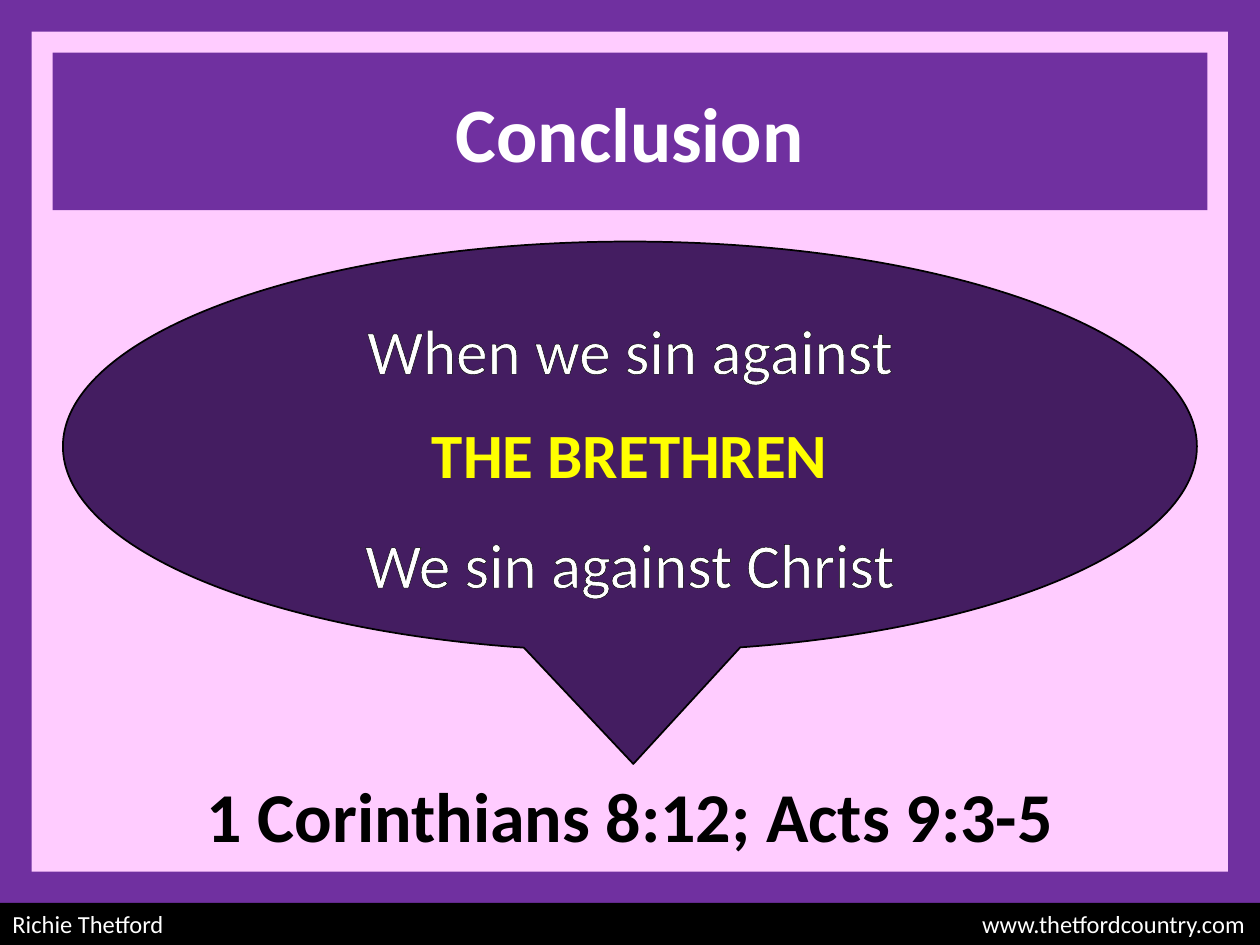
import pptx
import pptx.util
import pptx.dml.color
import pptx.enum.shapes
import pptx.enum.text
import pptx.oxml
from dataclasses import dataclass
from pptx.oxml.ns import nsdecls

Cm, Pt = pptx.util.Cm, pptx.util.Pt
RGB = pptx.dml.color.RGBColor.from_string
SHAPE = pptx.enum.shapes.MSO_SHAPE
ALIGN = pptx.enum.text.PP_ALIGN
ANCHOR = pptx.enum.text.MSO_ANCHOR


@dataclass(frozen=True)
class Theme:
    font: str = "Calibri"
    page: str = "FFCCFF"
    frame: str = "7030A0"
    callout: str = "441D61"
    dark: str = "000000"
    light: str = "FFFFFF"
    accent: str = "FFFF00"
    title: int = 44
    reference: int = 40
    body: int = 36
    footer: int = 14


theme = Theme()


def add_block(s, kind, left, top, width, height, color):
    """Add a filled preset shape without line or shadow; lengths in cm."""
    sp = s.shapes.add_shape(kind, Cm(left), Cm(top), Cm(width), Cm(height))
    sp.shadow.inherit = False
    sp.fill.solid()
    sp.fill.fore_color.rgb = RGB(color)
    sp.line.fill.background()
    return sp


def write(sp, text, size, color, bold=False, align=ALIGN.CENTER):
    """Put one formatted paragraph in a shape and return it."""
    p = sp.text_frame.paragraphs[0]
    p.text = text
    p.alignment = align
    for r in p.runs:
        r.font.size = Pt(size)
        r.font.bold = bold
        r.font.color.rgb = RGB(color)
        r.font.name = theme.font
    return p


prs = pptx.Presentation()
prs.slide_width, prs.slide_height = Cm(25.4), Cm(19.05)
s = prs.slides.add_slide(prs.slide_layouts[6])
s.background.fill.solid()
s.background.fill.fore_color.rgb = RGB(theme.page)

# Frame: left, right, top, bottom
band = 0.64
for box in [(0, 0, band, 19.05), (25.4 - band, 0, band, 19.05),
            (0, 0, 25.4, band), (0, 17.57, 25.4, band)]:
    add_block(s, SHAPE.RECTANGLE, *box, theme.frame)

# Speech bubble
bubble = add_block(s, SHAPE.OVAL_CALLOUT, 1.27, 4.87, 22.86, 8.26, theme.callout)
bubble.adjustments[0] = 0.003
bubble.adjustments[1] = 0.775
bubble.line.color.rgb = RGB(theme.dark)
bubble.line.width = Pt(1)

for text, top, color, bold in [
    ("When we sin against", 6.15, theme.light, False),
    ("THE BRETHREN", 8.26, theme.accent, True),
    ("We sin against Christ", 10.46, theme.light, False),
]:
    tb = s.shapes.add_textbox(Cm(5.08), Cm(top), Cm(15.24), Cm(1.8))
    tb.text_frame.word_wrap = False
    p = write(tb, text, theme.body, color, bold)
    p.runs[0].font._element.insert(0, pptx.oxml.parse_xml(
        f'<a:ln {nsdecls("a")} w="9525"><a:solidFill>'
        f'<a:srgbClr val="{theme.dark}"/></a:solidFill></a:ln>'))

# Scripture reference with a light text shadow
tb = s.shapes.add_textbox(Cm(1.06), Cm(15.44), Cm(23.28), Cm(1.96))
tb.text_frame.word_wrap = True
p = write(tb, "1 Corinthians 8:12; Acts 9:3-5", theme.reference, theme.dark, True)
p.runs[0].font._element.find(pptx.oxml.ns.qn("a:solidFill")).addnext(
    pptx.oxml.parse_xml(
        f'<a:effectLst {nsdecls("a")}><a:outerShdw dist="35921" dir="2700000">'
        f'<a:srgbClr val="{theme.light}"/></a:outerShdw></a:effectLst>'))

# Title
title = add_block(s, SHAPE.RECTANGLE, 1.06, 1.06, 23.28, 3.18, theme.frame)
title.text_frame.vertical_anchor = ANCHOR.MIDDLE
write(title, "Conclusion", theme.title, theme.light, True)

# Footer: the address sits on a right tab stop
footer = add_block(s, SHAPE.RECTANGLE, 0, 18.2, 25.4, 0.85, theme.dark)
footer.text_frame.vertical_anchor = ANCHOR.MIDDLE
p = write(footer, "Richie Thetford\twww.thetfordcountry.com",
          theme.footer, theme.light, align=ALIGN.LEFT)
p._p.get_or_add_pPr().append(pptx.oxml.parse_xml(
    f'<a:tabLst {nsdecls("a")}><a:tab pos="{Cm(24.85)}" algn="r"/></a:tabLst>'))

prs.save("out.pptx")
